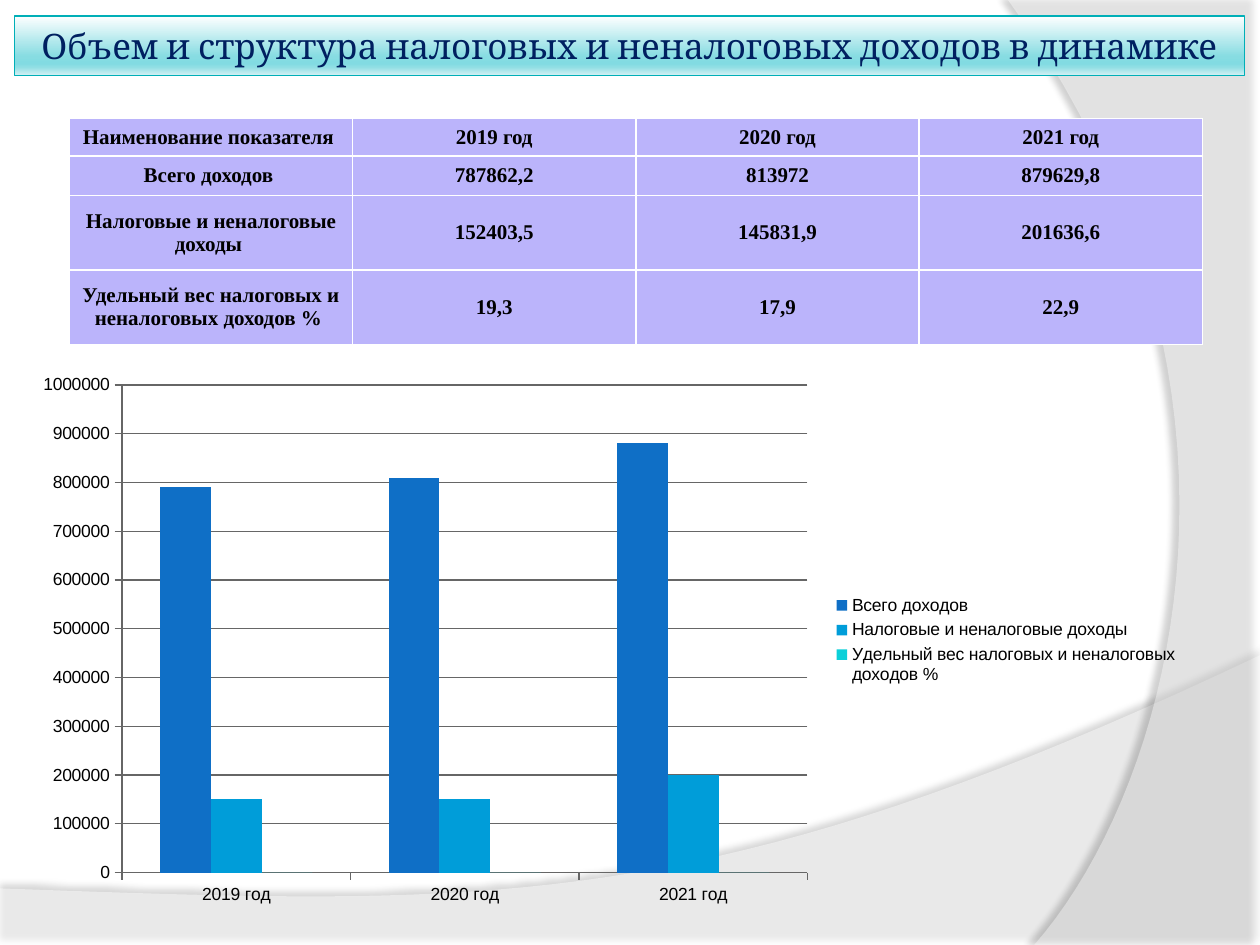
from lxml import etree
from pptx import Presentation
from pptx.chart.data import CategoryChartData
from pptx.dml.color import RGBColor
from pptx.enum.chart import XL_CHART_TYPE, XL_LEGEND_POSITION, XL_TICK_MARK
from pptx.enum.text import MSO_ANCHOR, MSO_AUTO_SIZE, PP_ALIGN
from pptx.oxml import parse_xml
from pptx.oxml.ns import nsdecls, qn
from pptx.util import Cm, Pt

COLUMN_CLUSTERED = XL_CHART_TYPE.COLUMN_CLUSTERED
LEGEND_RIGHT = XL_LEGEND_POSITION.RIGHT
TICK_OUTSIDE = XL_TICK_MARK.OUTSIDE
MIDDLE = MSO_ANCHOR.MIDDLE
CENTER = PP_ALIGN.CENTER
NO_AUTOFIT = MSO_AUTO_SIZE.NONE

WHITE = RGBColor(0xFF, 0xFF, 0xFF)
BLACK = RGBColor(0x00, 0x00, 0x00)
NAVY = RGBColor(0x00, 0x20, 0x60)
TEAL = RGBColor(0x00, 0xAF, 0xB7)
LILAC = RGBColor(0xBB, 0xB4, 0xFB)
GREY = RGBColor(0x66, 0x66, 0x66)
SERIES_COLORS = [
    RGBColor(0x0F, 0x6F, 0xC6),
    RGBColor(0x00, 0x9D, 0xD9),
    RGBColor(0x0B, 0xD0, 0xD9),
]
TITLE_STOPS = [
    (0, RGBColor(0xFE, 0xFF, 0xFF)),
    (68, RGBColor(0x87, 0xDC, 0xE2)),
    (81, RGBColor(0x82, 0xDB, 0xE2)),
    (86, RGBColor(0x90, 0xDE, 0xE4)),
    (100, RGBColor(0xD3, 0xF0, 0xF3)),
]


def curve_points(start, control_1, control_2, end, steps=40):
    points = []
    for step in range(1, steps + 1):
        t = step / steps
        weights = ((1 - t) ** 3, 3 * t * (1 - t) ** 2, 3 * t * t * (1 - t), t ** 3)
        corners = (start, control_1, control_2, end)
        points.append(tuple(sum(w * c[axis] for w, c in zip(weights, corners)) for axis in (0, 1)))
    return points


presentation = Presentation()
presentation.slide_width = Cm(25.4)
presentation.slide_height = Cm(19.05)
slide = presentation.slides.add_slide(presentation.slide_layouts[5])
shapes = slide.shapes

wave = [(0, 17.91), (0, 19.05), (25.4, 19.05), (25.4, 13.21)]
wave += curve_points((25.4, 13.21), (14.2, 18.52), (9.93, 18.26), (0, 17.91))
arc = [(25.4, 0), (25.4, 19.05), (20.85, 19.05)]
arc += curve_points((20.85, 19.05), (23.75, 15.72), (25.86, 7.62), (20.32, 0))

for outline, opacity, shadow_opacity, distance, direction in [
    (wave, 45, 35, 3.5, 270),
    (arc, 40, 45, 4, 180),
]:
    points = [(Cm(x), Cm(y)) for x, y in outline]
    builder = shapes.build_freeform(*points[0])
    builder.add_line_segments(points[1:], close=True)
    shape = builder.convert_to_shape()
    shape.fill.solid()
    shape.fill.fore_color.rgb = WHITE
    shape.line.fill.background()
    color = shape._element.spPr.find(qn("a:solidFill"))[0]
    etree.SubElement(color, qn("a:alpha"), val=str(opacity * 1000))
    shape._element.spPr.append(parse_xml(
        f'<a:effectLst {nsdecls("a")}><a:outerShdw blurRad="{Pt(4)}" dist="{Pt(distance)}" '
        f'dir="{direction * 60000}" algn="ctr" rotWithShape="0"><a:srgbClr val="{BLACK}">'
        f'<a:alpha val="{shadow_opacity * 1000}"/></a:srgbClr></a:outerShdw></a:effectLst>'
    ))

title = shapes.title
title.left, title.top, title.width, title.height = Cm(0.29), Cm(0.32), Cm(24.8), Cm(1.2)
title.fill.gradient()
title.fill.gradient_angle = 270
stop_list = title._element.spPr.find(".//" + qn("a:gsLst"))
for stop in list(stop_list):
    stop_list.remove(stop)
for position, color in TITLE_STOPS:
    stop = etree.SubElement(stop_list, qn("a:gs"), pos=str(position * 1000))
    etree.SubElement(stop, qn("a:srgbClr"), val=str(color))
title.line.color.rgb = TEAL
title.line.width = Pt(0.75)
title.text_frame.text = "Объем и структура налоговых и неналоговых доходов в динамике"
title.text_frame.auto_size = NO_AUTOFIT
title.text_frame.vertical_anchor = MIDDLE
paragraph = title.text_frame.paragraphs[0]
paragraph.alignment = CENTER
paragraph.font.size = Pt(20)
paragraph.font.name = "Cambria"
paragraph.font.color.rgb = NAVY
shapes._spTree.append(title._element)

rows = [
    ["Наименование показателя ", "2019 год", "2020 год", "2021 год"],
    ["Всего доходов ", "787862,2", "813972", "879629,8"],
    ["Налоговые и неналоговые доходы ", "152403,5", "145831,9", "201636,6"],
    ["Удельный вес налоговых и неналоговых доходов % ", "19,3", "17,9", "22,9"],
]

chart_data = CategoryChartData()
chart_data.categories = rows[0][1:]
for name, *values in rows[1:]:
    chart_data.add_series(name, [round(float(value.replace(",", ".")), -4) for value in values])
chart = shapes.add_chart(
    COLUMN_CLUSTERED, Cm(0.4), Cm(7.34), Cm(23.61), Cm(11.12), chart_data
).chart
chart.has_title = False
chart.font.size = Pt(10)
chart.font.name = "Arial"
chart.font.color.rgb = BLACK
chart.has_legend = True
chart.legend.position = LEGEND_RIGHT
chart.legend.include_in_layout = False
chart.plots[0].gap_width = 150
chart.plots[0].overlap = 0
chart.plots[0].vary_by_categories = False
for series, color in zip(chart.plots[0].series, SERIES_COLORS):
    series.format.fill.solid()
    series.format.fill.fore_color.rgb = color
for axis in (chart.category_axis, chart.value_axis):
    axis.major_tick_mark = TICK_OUTSIDE
    axis.format.line.color.rgb = GREY
value_axis = chart.value_axis
value_axis.minimum_scale = 0
value_axis.maximum_scale = 1000000
value_axis.major_unit = 100000
value_axis.has_major_gridlines = True
value_axis.major_gridlines.format.line.color.rgb = GREY

table = shapes.add_table(4, 4, Cm(1.4), Cm(2.39), Cm(22.84), Cm(4.55)).table
table.first_row = False
table.horz_banding = False
for column in table.columns:
    column.width = Cm(5.71)
for row, height in zip(table.rows, (0.76, 0.79, 1.5, 1.5)):
    row.height = Cm(height)
for row_index, row in enumerate(rows):
    for column_index, text in enumerate(row):
        cell = table.cell(row_index, column_index)
        cell.text = text
        cell.vertical_anchor = MIDDLE
        cell.margin_left = cell.margin_right = cell.margin_top = cell.margin_bottom = 0
        paragraph = cell.text_frame.paragraphs[0]
        paragraph.alignment = CENTER
        paragraph.font.size = Pt(12)
        paragraph.font.name = "Times New Roman"
        paragraph.font.bold = True
        paragraph.font.color.rgb = BLACK
        properties = cell._tc.get_or_add_tcPr()
        for side in ("L", "R", "T", "B"):
            thick = (row_index, side) in [(0, "B"), (1, "T")]
            border = etree.SubElement(properties, qn(f"a:ln{side}"), w=str(Pt(1.5 if thick else 1)))
            fill = etree.SubElement(border, qn("a:solidFill"))
            etree.SubElement(fill, qn("a:srgbClr"), val=str(WHITE))
        cell.fill.solid()
        cell.fill.fore_color.rgb = LILAC

presentation.save("out.pptx")
